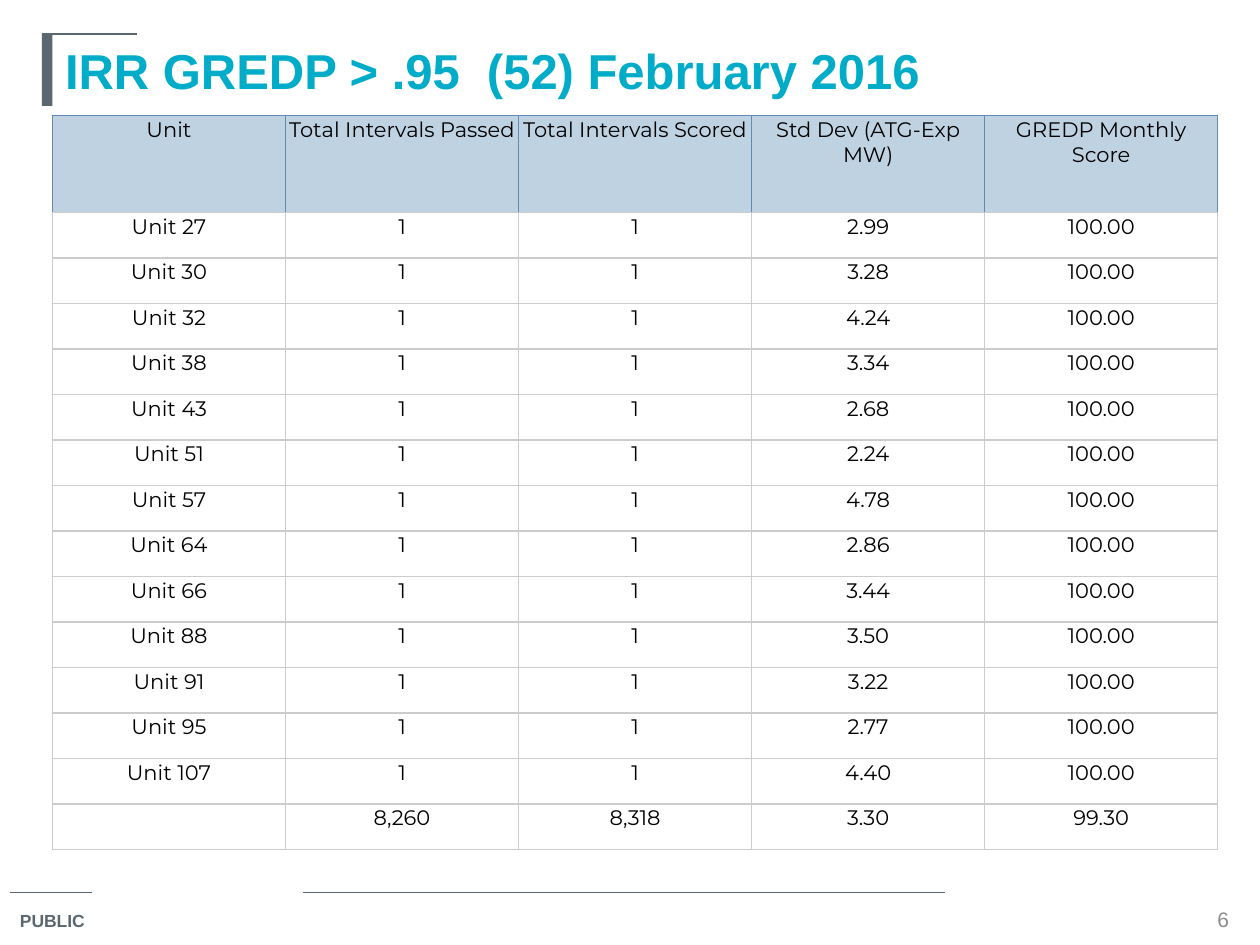
"""Builds the monthly GREDP score slide with its unit table."""
from lxml.etree import SubElement
from pptx import Presentation
from pptx.dml.color import RGBColor as Color
from pptx.enum.shapes import MSO_CONNECTOR as Connector, MSO_SHAPE as Shape
from pptx.enum.text import MSO_ANCHOR as Anchor, MSO_AUTO_SIZE as AutoSize, PP_ALIGN as Align
from pptx.oxml.ns import qn
from pptx.util import Pt

TITLE = "IRR GREDP > .95  (52) February 2016"
CLASSIFICATION = "PUBLIC"
PAGE_NUMBER = "6"
HEADERS = ["Unit", "Total Intervals Passed", "Total Intervals Scored",
           "Std Dev (ATG-Exp MW)", "GREDP Monthly Score"]
DEVIATIONS = {
    "Unit 27": "2.99", "Unit 30": "3.28", "Unit 32": "4.24", "Unit 38": "3.34",
    "Unit 43": "2.68", "Unit 51": "2.24", "Unit 57": "4.78", "Unit 64": "2.86",
    "Unit 66": "3.44", "Unit 88": "3.50", "Unit 91": "3.22", "Unit 95": "2.77",
    "Unit 107": "4.40",
}
TOTALS = ["", "8,260", "8,318", "3.30", "99.30"]
ROWS = [HEADERS, *([unit, "1", "1", deviation, "100.00"]
                   for unit, deviation in DEVIATIONS.items()), TOTALS]

THEME = {
    "slate": "5B6770", "header fill": "BFD2E2", "header border": "608BB4", "grid": "CCCCCC",
    "title": {"name": "Arial", "size": 28, "bold": True, "color": "00ACC8"},
    "label": {"name": "Arial", "size": 10, "bold": True, "color": "5B6770"},
    "page": {"name": "Arial", "size": 12, "bold": False, "color": "8C8C8C"},
    "cell": {"name": "Montserrat", "size": 12, "bold": False, "color": "000000"},
}
RULES = [(6, 510, 52.5), (173, 510, 540), (24, 19.5, 78.5)]
ACCENT_BAR = (24, 19.5, 6, 41)
TITLE_BOX = (30, 19.5, 666, 52.5)
LABEL_BOX = (4.3, 516.5, 55.5, 20)
PAGE_BOX = (690, 517, 18, 16.5)
TABLE_BOX = (30, 66, 666, 419.75)
HEADER_HEIGHT = 55.5


def points(values):
    return [Pt(value) for value in values]


def write(frame, text, style, align=Align.LEFT):
    paragraph = frame.paragraphs[0]
    paragraph.alignment = align
    run = paragraph.add_run()
    run.text = text
    values = {**THEME[style], "size": Pt(THEME[style]["size"])}
    run.font.color.rgb = Color.from_string(values.pop("color"))
    for attribute, value in values.items():
        setattr(run.font, attribute, value)


def add_text(slide, box, text, style, align=Align.LEFT, **settings):
    frame = slide.shapes.add_textbox(*points(box)).text_frame
    for attribute, value in settings.items():
        setattr(frame, attribute, value)
    write(frame, text, style, align)


def add_rule(slide, left, top, right):
    rule = slide.shapes.add_connector(Connector.STRAIGHT, *points((left, top, right, top)))
    rule.line.color.rgb = Color.from_string(THEME["slate"])
    rule.line.width = Pt(0.75)
    SubElement(rule._element.spPr, qn("a:effectLst"))


def add_accent_bar(slide):
    bar = slide.shapes.add_shape(Shape.RECTANGLE, *points(ACCENT_BAR))
    bar.shadow.inherit = False
    bar.fill.solid()
    bar.fill.fore_color.rgb = Color.from_string(THEME["slate"])
    bar.line.fill.background()


def set_title(slide):
    title = slide.shapes.title
    for attribute, value in zip(("left", "top", "width", "height"), points(TITLE_BOX)):
        setattr(title, attribute, value)
    frame = title.text_frame
    settings = {"vertical_anchor": Anchor.TOP, "auto_size": AutoSize.NONE, "word_wrap": True}
    for attribute, value in settings.items():
        setattr(frame, attribute, value)
    write(frame, TITLE, "title")


def set_borders(cell, colors):
    properties = cell._tc.get_or_add_tcPr()
    for side, color in zip("LRTB", colors):
        border = SubElement(properties, qn(f"a:ln{side}"), w=str(Pt(1)))
        fill = SubElement(border, qn("a:solidFill"))
        SubElement(fill, qn("a:srgbClr"), val=color)


def format_cell(cell, text, is_header):
    margins = {"margin_left": 0.75, "margin_right": 0.75, "margin_top": 0.75, "margin_bottom": 0}
    for attribute, value in margins.items():
        setattr(cell, attribute, Pt(value))
    cell.vertical_anchor = Anchor.TOP
    edge = THEME["header border" if is_header else "grid"]
    set_borders(cell, (edge, edge, edge, THEME["grid"]))
    if is_header:
        cell.fill.solid()
        cell.fill.fore_color.rgb = Color.from_string(THEME["header fill"])
    else:
        cell.fill.background()
    write(cell.text_frame, text, "cell", Align.CENTER)


def add_score_table(slide):
    table = slide.shapes.add_table(len(ROWS), len(HEADERS), *points(TABLE_BOX)).table
    table.horz_banding = False
    for column in table.columns:
        column.width = Pt(TABLE_BOX[2] / len(HEADERS))
    body_height = (TABLE_BOX[3] - HEADER_HEIGHT) / (len(ROWS) - 1)
    for index, (row, texts) in enumerate(zip(table.rows, ROWS)):
        row.height = Pt(body_height if index else HEADER_HEIGHT)
        for cell, text in zip(row.cells, texts):
            format_cell(cell, text, index == 0)


def main():
    presentation = Presentation()
    presentation.slide_width, presentation.slide_height = points((720, 540))
    slide = presentation.slides.add_slide(presentation.slide_layouts[5])
    for rule in RULES:
        add_rule(slide, *rule)
    add_accent_bar(slide)
    set_title(slide)
    add_text(slide, LABEL_BOX, CLASSIFICATION, "label", auto_size=AutoSize.SHAPE_TO_FIT_TEXT)
    add_text(slide, PAGE_BOX, PAGE_NUMBER, "page", Align.CENTER, vertical_anchor=Anchor.MIDDLE,
             margin_left=0, margin_right=0, margin_top=0, margin_bottom=0, word_wrap=True)
    add_score_table(slide)
    presentation.save("out.pptx")


if __name__ == "__main__":
    main()
